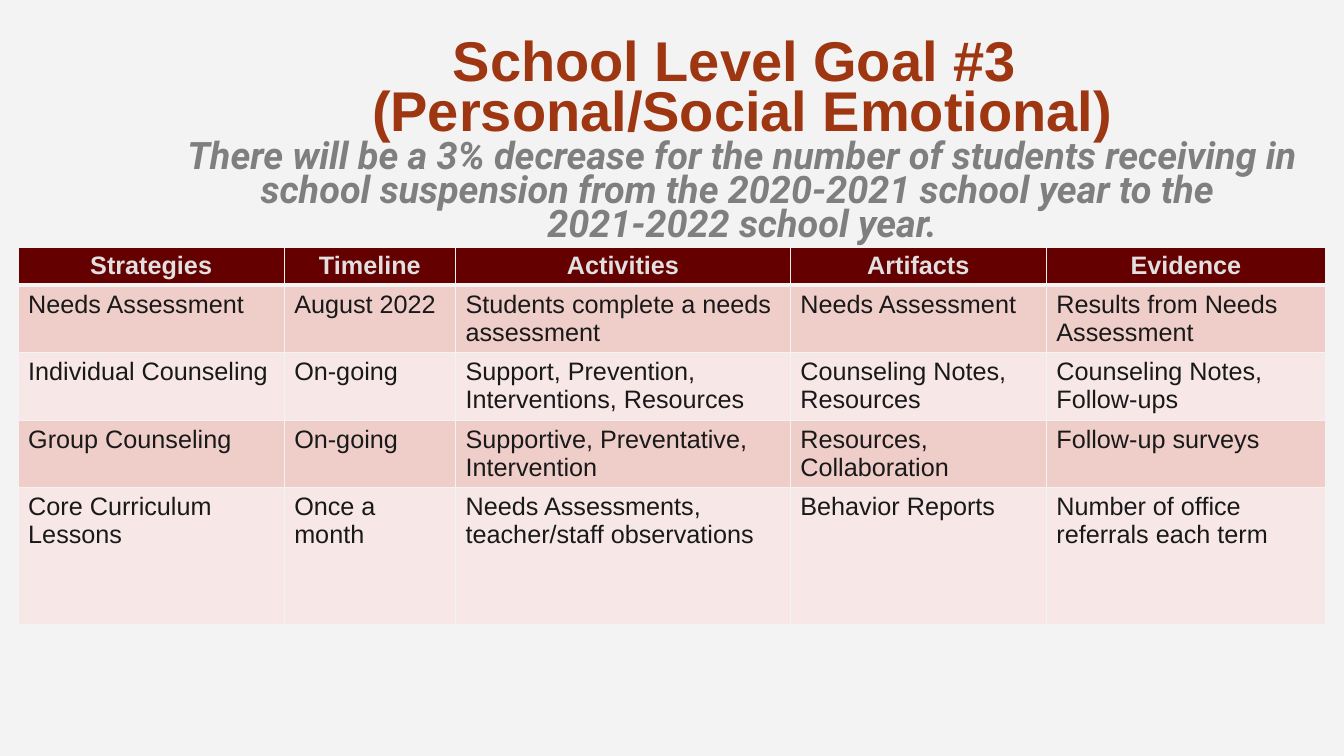
from dataclasses import dataclass

from lxml.etree import SubElement
from pptx import Presentation
from pptx.dml.color import RGBColor
from pptx.enum.text import MSO_ANCHOR as Anchor, MSO_AUTO_SIZE as AutoSize, PP_ALIGN as Align
from pptx.oxml.ns import qn
from pptx.util import Inches, Pt

WIDTH, HEIGHT = Inches(13.33), Inches(7.5)
PAPER, MAROON, RUST, GRAY = "F3F3F3", "640000", "9E3611", "7F7F7F"
HEADER_TEXT, CELL_TEXT = "E1DFDF", "191919"
BANDS = ("EFCECA", "F7E8E7")

COLUMN_SHARES = (19.8, 12.75, 24.91, 19.05, 20.78)
ROW_SHARES = (5.07, 8.93, 8.93, 8.93, 18.13)
PLAN = (
    ("Strategies", "Timeline", "Activities", "Artifacts", "Evidence"),
    ("Needs Assessment", "August 2022", "Students complete a needs assessment",
     "Needs Assessment", "Results from Needs Assessment"),
    ("Individual Counseling", "On-going", "Support, Prevention, Interventions, Resources",
     "Counseling Notes, Resources", "Counseling Notes, Follow-ups"),
    ("Group Counseling", "On-going", "Supportive, Preventative, Intervention",
     "Resources, Collaboration", "Follow-up surveys"),
    ("Core Curriculum Lessons", "Once a month", "Needs Assessments, teacher/staff observations",
     "Behavior Reports", "Number of office referrals each term"),
)


@dataclass(frozen=True)
class Style:
    size: float
    font: str
    color: str
    bold: bool = True
    italic: bool = False
    align: Align = Align.CENTER


HEADING = Style(40, "Arial", RUST)
GOAL = Style(27, "Roboto", GRAY, italic=True)
COLUMN_HEAD = Style(18, "Arial", HEADER_TEXT)
ENTRY = Style(18, "Arial", CELL_TEXT, bold=False, align=Align.LEFT)

GOAL_LINES = (
    ("School Level Goal #3 ", HEADING),
    ("(Personal/Social Emotional)", HEADING),
    ("There will be a 3% decrease for the number of students receiving in school "
     "suspension from the 2020-2021 school year to the ", GOAL),
    ("2021-2022 school year.", GOAL),
)


def across(share: float) -> int:
    """Return a percentage of the slide's width."""
    return round(WIDTH * share / 100)


def down(share: float) -> int:
    """Return a percentage of the slide's height."""
    return round(HEIGHT * share / 100)


def paint(fill, color: str) -> None:
    """Fill with one solid colour."""
    fill.solid()
    fill.fore_color.rgb = RGBColor.from_string(color)


def write(para, text: str, style: Style) -> None:
    """Put styled text into a paragraph."""
    para.text = text
    para.alignment = style.align
    for span in para.runs:
        font = span.font
        font.size, font.name = Pt(style.size), style.font
        font.bold, font.italic = style.bold, style.italic
        paint(font.fill, style.color)


def add_border(cell, side: str, points: float) -> None:
    """Draw one edge of a table cell."""
    line = SubElement(cell._tc.get_or_add_tcPr(), qn(f"a:ln{side}"), w=str(Pt(points)))
    SubElement(SubElement(line, qn("a:solidFill")), qn("a:srgbClr"), val=PAPER)


def add_goal(page) -> None:
    """Write the heading and the goal in the body placeholder."""
    title = page.shapes.title
    title.element.getparent().remove(title.element)
    box = page.placeholders[1]
    box.left, box.top = across(11.78), down(0.8)
    box.width, box.height = across(86.87), down(36.13)
    frame = box.text_frame
    frame.word_wrap, frame.auto_size = True, AutoSize.NONE
    frame.vertical_anchor = Anchor.MIDDLE
    frame.margin_left = frame.margin_right = 0
    frame.text = "\n".join(text for text, _ in GOAL_LINES)
    for para, (text, style) in zip(frame.paragraphs, GOAL_LINES):
        write(para, text, style)
        para.line_spacing = 0.75
        para.space_before = para.space_after = Pt(0)


def add_plan(page) -> None:
    """Build the table of strategies."""
    table = page.shapes.add_table(
        len(PLAN), len(COLUMN_SHARES), across(1.35), down(32.67),
        across(sum(COLUMN_SHARES)), down(sum(ROW_SHARES))).table
    for column, share in zip(table.columns, COLUMN_SHARES):
        column.width = across(share)
    for row, share in zip(table.rows, ROW_SHARES):
        row.height = down(share)
    for level, texts in enumerate(PLAN):
        is_head = level == 0
        for position, text in enumerate(texts):
            cell = table.cell(level, position)
            write(cell.text_frame.paragraphs[0], text, COLUMN_HEAD if is_head else ENTRY)
            for side in "LRTB":
                under_head = (level, side) in ((0, "B"), (1, "T"))
                add_border(cell, side, 3 if under_head else 1)
            paint(cell.fill, MAROON if is_head else BANDS[(level - 1) % 2])


def main() -> None:
    """Build and save the deck."""
    deck = Presentation()
    deck.slide_width, deck.slide_height = WIDTH, HEIGHT
    page = deck.slides.add_slide(deck.slide_layouts[2])
    paint(page.background.fill, PAPER)
    add_goal(page)
    add_plan(page)
    deck.save("out.pptx")


if __name__ == "__main__":
    main()
